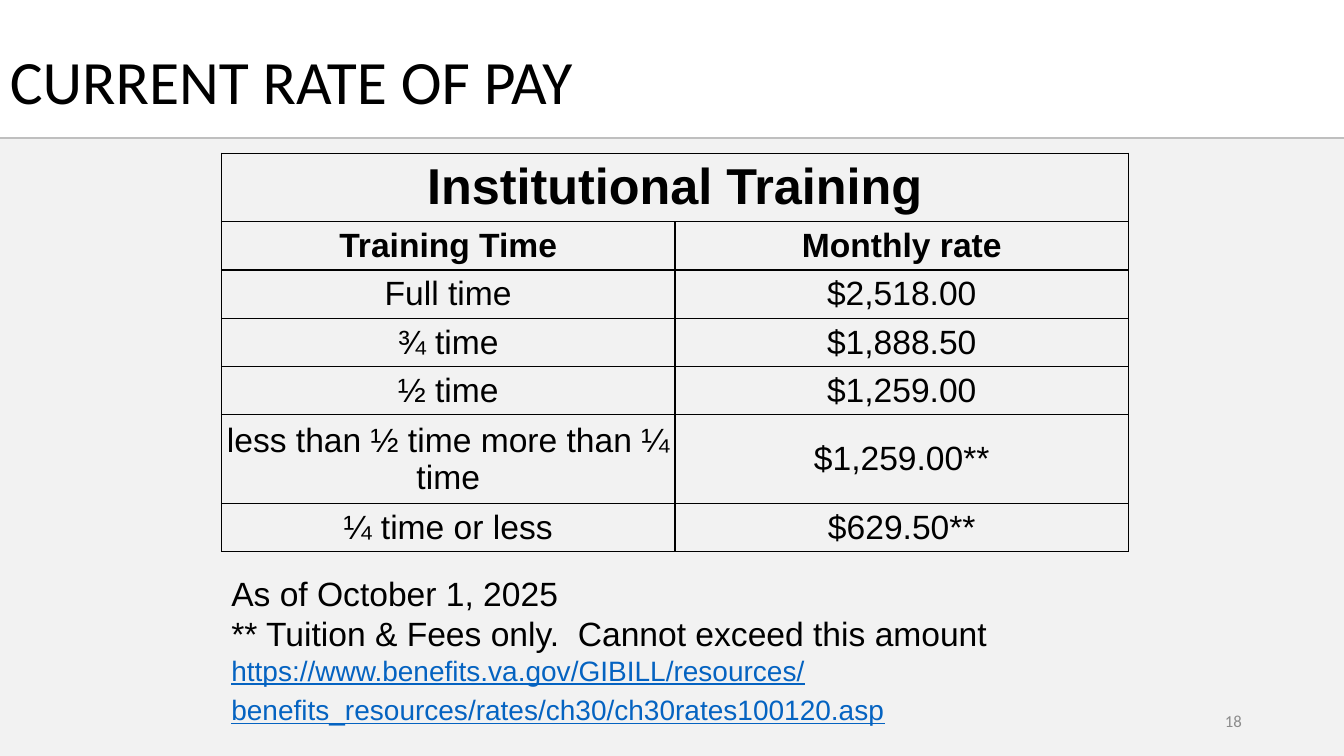
from lxml.etree import SubElement
from pptx import Presentation
from pptx.dml.color import RGBColor
from pptx.enum.shapes import MSO_CONNECTOR, MSO_SHAPE
from pptx.enum.text import MSO_ANCHOR, PP_ALIGN
from pptx.oxml import parse_xml
from pptx.oxml.ns import nsdecls, qn
from pptx.util import Cm, Pt

WIDE, HIGH, EDGE = 33.87, 19.05, 3.47
BODY = {"name": "Arial", "size": Pt(24), "bold": False}
HEAD = {**BODY, "bold": True}
TOP = {**HEAD, "size": Pt(36)}
TITLE = {"name": "Calibri", "size": Pt(44)}
PAGE = {"name": "Calibri", "size": Pt(12)}
LINK = {"name": "Arial", "size": Pt(20), "underline": True}
URL = ("https://www.benefits.va.gov/GIBILL/resources/"
       "benefits_resources/rates/ch30/ch30rates100120.asp")
RATES = [
    ("Institutional Training", ""),
    ("Training Time", "Monthly rate"),
    ("Full time", "$2,518.00"),
    ("¾ time", "$1,888.50"),
    ("½ time", "$1,259.00"),
    ("less than ½ time more than ¼ time", "$1,259.00**"),
    ("¼ time or less", "$629.50**"),
]


def paint(color):
    """Turn a hex string into a colour."""
    return RGBColor.from_string(color)


def style(item, form):
    """Set each value of a format on an object."""
    for name, value in form.items():
        setattr(item, name, value)


def add_run(para, text, form, color="000000"):
    """Add formatted text to a paragraph."""
    run = para.add_run()
    run.text = text
    style(run.font, form)
    run.font.color.rgb = paint(color)


def add_box(slide, place, anchor=MSO_ANCHOR.TOP):
    """Add a wrapped text box and return its frame."""
    frame = slide.shapes.add_textbox(*map(Cm, place)).text_frame
    style(frame, {"word_wrap": True, "vertical_anchor": anchor})
    return frame


def add_panel(slide):
    """Draw the grey area and the rule above it."""
    panel = slide.shapes.add_shape(
        MSO_SHAPE.RECTANGLE, 0, Cm(EDGE), Cm(WIDE), Cm(HIGH - EDGE))
    panel.shadow.inherit = False
    panel.fill.solid()
    panel.fill.fore_color.rgb = paint("F2F2F2")
    panel.line.fill.background()
    rule = slide.shapes.add_connector(
        MSO_CONNECTOR.STRAIGHT, 0, Cm(EDGE), Cm(WIDE), Cm(EDGE))
    rule.line.color.rgb = paint("BFBFBF")
    rule.line.width = Pt(1.5)
    SubElement(rule._element.spPr, qn("a:effectLst"))


def add_edges(cell):
    """Give a cell thin black borders and no fill."""
    props = cell._tc.get_or_add_tcPr()
    for side in ("lnL", "lnR", "lnT", "lnB"):
        props.append(parse_xml(
            f'<a:{side} {nsdecls("a")} w="12700"><a:solidFill>'
            f'<a:srgbClr val="000000"/></a:solidFill></a:{side}>'))
    cell.fill.background()


def add_rates(slide):
    """Build the table of monthly rates."""
    place = map(Cm, (5.58, 3.86, 22.86, 1.17 * len(RATES)))
    table = slide.shapes.add_table(len(RATES), 2, *place).table
    style(table, {"first_row": False, "horz_banding": False})
    inset = {f"margin_{side}": Cm(0.1)
             for side in ("left", "right", "top", "bottom")}
    forms = [TOP, HEAD] + [BODY] * (len(RATES) - 2)
    for row, (texts, form) in enumerate(zip(RATES, forms)):
        for col, text in enumerate(texts):
            cell = table.cell(row, col)
            style(cell, {**inset, "vertical_anchor": MSO_ANCHOR.MIDDLE})
            add_edges(cell)
            if text:
                para = cell.text_frame.paragraphs[0]
                para.alignment = PP_ALIGN.CENTER
                add_run(para, text, form)
    table.cell(0, 0).merge(table.cell(0, 1))


def add_notes(slide):
    """Write the date, the limit and the address."""
    frame = add_box(slide, (5.58, 14.3, 20.22, 4.19))
    add_run(frame.paragraphs[0], "As of October 1, 2025", BODY)
    add_run(frame.add_paragraph(),
            "** Tuition & Fees only.  Cannot exceed this amount", BODY)
    para = frame.add_paragraph()
    add_run(para, URL, LINK, "0563C1")
    add_run(para, " ", BODY)


def main():
    """Build and save the slide."""
    deck = Presentation()
    style(deck, {"slide_width": Cm(WIDE), "slide_height": Cm(HIGH)})
    slide = deck.slides.add_slide(deck.slide_layouts[6])
    add_panel(slide)
    title = add_box(slide, (0, 0.84, 18.39, 2.57), MSO_ANCHOR.MIDDLE)
    title.paragraphs[0].line_spacing = 0.9
    add_run(title.paragraphs[0], "CURRENT RATE OF PAY", TITLE)
    add_rates(slide)
    page = add_box(slide, (23.93, 17.66, 7.62, 1.01), MSO_ANCHOR.MIDDLE)
    page.paragraphs[0].alignment = PP_ALIGN.RIGHT
    add_run(page.paragraphs[0], "18", PAGE, "8C8C8C")
    add_notes(slide)
    deck.save("out.pptx")


if __name__ == "__main__":
    main()
